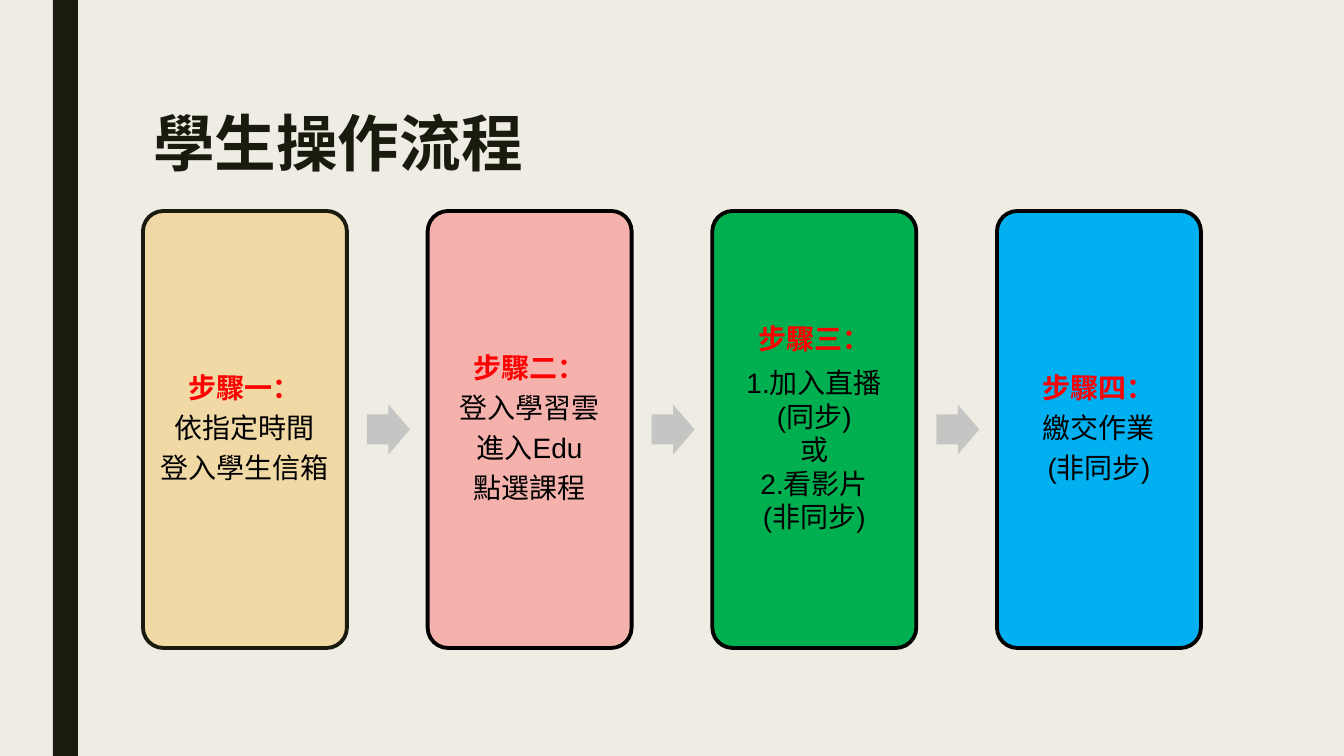
from dataclasses import dataclass

from pptx import Presentation
from pptx.dml.color import RGBColor
from pptx.enum.shapes import MSO_SHAPE
from pptx.enum.text import MSO_ANCHOR, MSO_AUTO_SIZE, PP_ALIGN
from pptx.util import Pt

RECTANGLE = MSO_SHAPE.RECTANGLE
ROUNDED = MSO_SHAPE.ROUNDED_RECTANGLE
ARROW = MSO_SHAPE.RIGHT_ARROW
MIDDLE = MSO_ANCHOR.MIDDLE
CENTER = PP_ALIGN.CENTER
LEFT = PP_ALIGN.LEFT
NO_FIT = MSO_AUTO_SIZE.NONE

# Content: heading, lines, fill, outline, whether the lines are spaced out
TITLE = "學生操作流程"
STEPS = [
    ("步驟一：", ["依指定時間", "登入學生信箱"], "F0D9A5", "191B0E", True),
    ("步驟二：", ["登入學習雲", "進入Edu", "點選課程"], "F5B2AD", "000000", True),
    ("步驟三：", ["1.加入直播", "(同步)", "或", "2.看影片", "(非同步)"],
     "00B050", "000000", False),
    ("步驟四：", ["繳交作業", "(非同步)"], "00B0F0", "000000", True),
]


@dataclass(frozen=True)
class Theme:
    background: str = "EFEDE3"
    dark: str = "191B0E"
    heading: str = "FF0000"
    body: str = "000000"
    arrow: str = "C5C5C3"
    title_font: str = "Roboto"
    body_font: str = "Arial"
    title_size: int = 44
    body_size: int = 20
    line_width: float = 2.75


THEME = Theme()

# Layout in px
PAGE_WIDTH, PAGE_HEIGHT = 1344, 756
EMU_PER_PX = 12192000 / PAGE_WIDTH
BAR = (53, 0, 25, PAGE_HEIGHT)
TITLE_BOX = (143, 108, 1058, 78)
FIRST_LEFT, LAST_LEFT = 143, 997
CARD_TOP, CARD_WIDTH, CARD_HEIGHT = 211, 204, 437
CARD_PADDING = 8
ARROW_WIDTH, ARROW_HEIGHT = 43, 50
ARROW_GAP = 20


def emu(px):
    return round(px * EMU_PER_PX)


def color(value):
    return RGBColor.from_string(value)


def add_box(page, kind, bounds, fill, outline=None):
    box = page.shapes.add_shape(kind, *map(emu, bounds))
    box.shadow.inherit = False
    box.fill.solid()
    box.fill.fore_color.rgb = color(fill)
    if outline:
        box.line.color.rgb = color(outline)
        box.line.width = Pt(THEME.line_width)
    else:
        box.line.fill.background()
    return box


def style_span(span, font, size, value, bold):
    span.font.name = font
    span.font.size = Pt(size)
    span.font.color.rgb = color(value)
    span.font.bold = bold


def add_card(page, left, step):
    heading, lines, fill, outline, spaced = step
    card = add_box(page, ROUNDED, (left, CARD_TOP, CARD_WIDTH, CARD_HEIGHT), fill, outline)
    card.adjustments[0] = 0.1
    frame = card.text_frame
    frame.word_wrap = True
    frame.vertical_anchor = MIDDLE
    frame.margin_left = frame.margin_right = emu(CARD_PADDING)
    frame.margin_top = frame.margin_bottom = emu(CARD_PADDING)
    frame.text = "\n".join([heading, *lines])
    for index, para in enumerate(frame.paragraphs):
        is_heading = index == 0
        para.alignment = CENTER
        if is_heading or spaced:
            para.line_spacing = 0.9
            para.space_after = Pt(THEME.body_size * 0.35)
        style_span(para.runs[0], THEME.body_font, THEME.body_size,
                   THEME.heading if is_heading else THEME.body, is_heading)


def add_title(page):
    title = page.shapes.title
    title.left, title.top, title.width, title.height = map(emu, TITLE_BOX)
    frame = title.text_frame
    frame.text = TITLE
    frame.auto_size = NO_FIT
    frame.vertical_anchor = MIDDLE
    para = frame.paragraphs[0]
    para.alignment = LEFT
    para.line_spacing = 0.89
    style_span(para.runs[0], THEME.title_font, THEME.title_size, THEME.dark, True)


def main():
    deck = Presentation()
    deck.slide_width, deck.slide_height = emu(PAGE_WIDTH), emu(PAGE_HEIGHT)
    page = deck.slides.add_slide(deck.slide_layouts[5])
    page.background.fill.solid()
    page.background.fill.fore_color.rgb = color(THEME.background)

    # Side bar and title
    add_box(page, RECTANGLE, BAR, THEME.dark)
    add_title(page)

    # Step cards with an arrow after each but the last
    pitch = (LAST_LEFT - FIRST_LEFT) / (len(STEPS) - 1)
    arrow_top = CARD_TOP + (CARD_HEIGHT - ARROW_HEIGHT) / 2
    for index, step in enumerate(STEPS):
        left = FIRST_LEFT + index * pitch
        add_card(page, left, step)
        if index < len(STEPS) - 1:
            arrow_left = left + CARD_WIDTH + ARROW_GAP
            arrow = add_box(page, ARROW, (arrow_left, arrow_top, ARROW_WIDTH, ARROW_HEIGHT),
                            THEME.arrow)
            arrow.adjustments[0] = 0.6
            arrow.adjustments[1] = 0.5

    deck.save("out.pptx")


if __name__ == "__main__":
    main()
